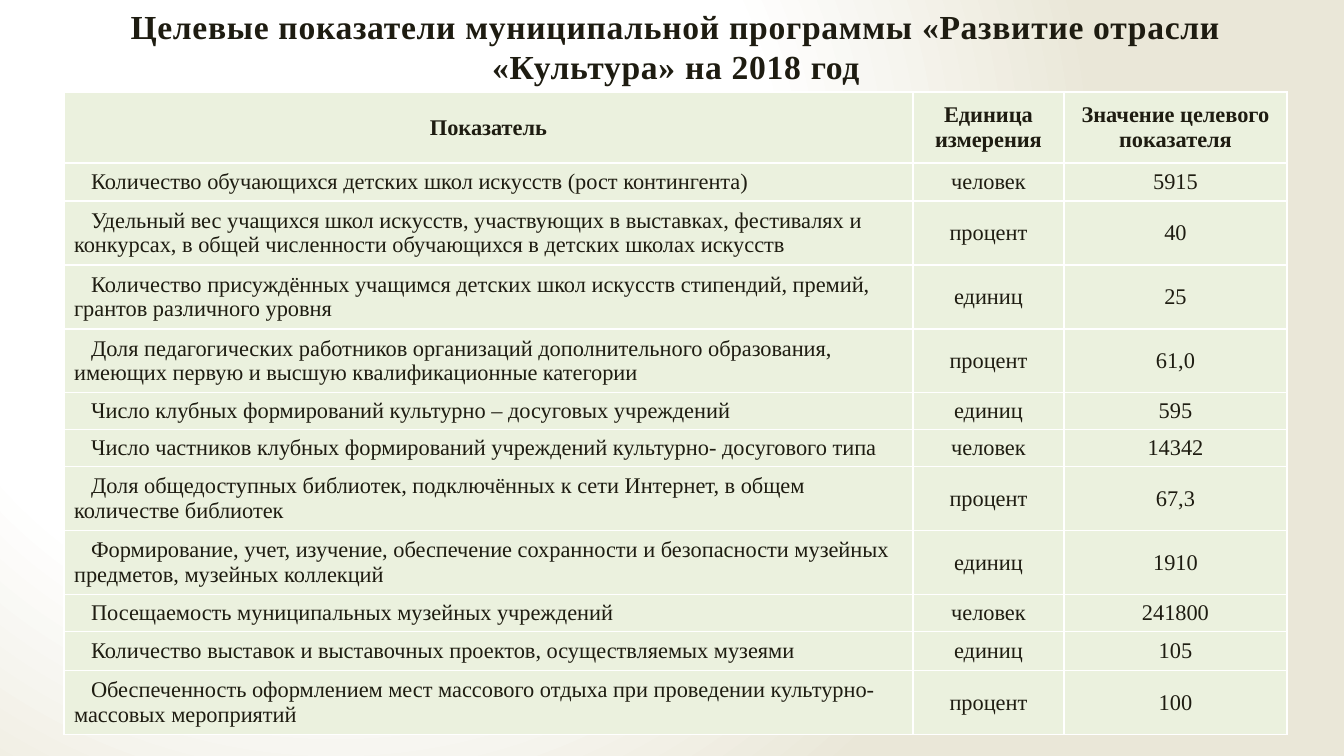
from pptx import Presentation
from pptx.dml.color import RGBColor
from pptx.enum.text import MSO_ANCHOR as Anchor, MSO_AUTO_SIZE as Fit, PP_ALIGN as Align
from pptx.oxml import parse_xml
from pptx.oxml.ns import nsdecls
from pptx.util import Pt

SCALE = 12192000 / 1344
FONT = "Times New Roman"
INK = RGBColor(0x1E, 0x1C, 0x11)
GREEN = RGBColor(0xEB, 0xF1, 0xDE)
WHITE = RGBColor(0xFF, 0xFF, 0xFF)
SAND = RGBColor(0xEA, 0xE7, 0xD8)

TITLE = "Целевые показатели муниципальной программы «Развитие отрасли «Культура» на 2018 год"
COLS = [849, 151, 223]
INDENT = 17
HEAD = (71, "Показатель", "Единица измерения", "Значение целевого показателя")
ROWS = [
    (38, "Количество обучающихся детских школ искусств (рост контингента)", "человек", "5915"),
    (64, "Удельный вес учащихся школ искусств, участвующих в выставках, фестивалях и конкурсах, "
         "в общей численности обучающихся в детских школах искусств", "процент", "40"),
    (64, "Количество присуждённых учащимся детских школ искусств стипендий, премий, "
         "грантов различного уровня", "единиц", "25"),
    (64, "Доля педагогических работников организаций дополнительного образования, "
         "имеющих первую и высшую квалификационные категории", "процент", "61,0"),
    (37, "Число клубных формирований культурно – досуговых учреждений", "единиц", "595"),
    (37, "Число частников клубных формирований учреждений культурно- досугового типа",
     "человек", "14342"),
    (64, "Доля общедоступных библиотек, подключённых к сети Интернет, "
         "в общем количестве библиотек", "процент", "67,3"),
    (64, "Формирование, учет, изучение, обеспечение сохранности и безопасности музейных "
         "предметов, музейных коллекций", "единиц", "1910"),
    (37, "Посещаемость муниципальных музейных учреждений", "человек", "241800"),
    (39, "Количество выставок и выставочных проектов, осуществляемых музеями", "единиц", "105"),
    (64, "Обеспеченность оформлением мест массового отдыха при проведении "
         "культурно-массовых мероприятий", "процент", "100"),
]


def px(num):
    """Turn pixels into EMU."""
    return round(num * SCALE)


def style(para, size, bold, align):
    """Set the font and alignment of a paragraph."""
    para.alignment = align
    font = para.font
    font.name, font.size, font.bold = FONT, Pt(size), bold
    font.color.rgb = INK


def add_back(slide):
    """Fill the background with a round gradient."""
    stops = "".join(
        f'<a:gs pos="{pos}000"><a:srgbClr val="{tone}"/></a:gs>'
        for pos, tone in [(19, WHITE), (56, WHITE), (100, SAND)])
    slide.element.cSld.insert(0, parse_xml(
        f'<p:bg {nsdecls("p", "a")}><p:bgPr><a:gradFill><a:gsLst>{stops}</a:gsLst>'
        '<a:path path="circle"><a:fillToRect l="50000" t="50000" r="100000" b="100000"/>'
        '</a:path></a:gradFill><a:effectLst/></p:bgPr></p:bg>'))


def add_title(slide):
    """Place and format the title."""
    title = slide.shapes.title
    title.left, title.top, title.width, title.height = map(px, (69, 0, 1214, 92))
    frame = title.text_frame
    frame.text = TITLE
    frame.word_wrap = True
    frame.auto_size = Fit.NONE
    frame.vertical_anchor = Anchor.MIDDLE
    para = frame.paragraphs[0]
    style(para, 24, True, Align.CENTER)
    para.runs[0].font._element.set("spc", "50")


def fill_cell(cell, text, bold, left):
    """Write one table cell."""
    cell.fill.solid()
    cell.fill.fore_color.rgb = GREEN
    cell.vertical_anchor = Anchor.MIDDLE
    cell.text = text
    para = cell.text_frame.paragraphs[0]
    if left:
        para._p.get_or_add_pPr().set("indent", str(px(INDENT)))
    style(para, 16, bold, Align.LEFT if left else Align.CENTER)


def add_grid(slide):
    """Add the table of targets."""
    data = [HEAD, *ROWS]
    high = sum(row[0] for row in data)
    table = slide.shapes.add_table(
        len(data), len(COLS), px(64), px(92), px(sum(COLS)), px(high)).table
    table.horz_banding = False
    for col, wide in zip(table.columns, COLS):
        col.width = px(wide)
    for i, (tall, *texts) in enumerate(data):
        table.rows[i].height = px(tall)
        for j, text in enumerate(texts):
            fill_cell(table.cell(i, j), text, i == 0, i > 0 and j == 0)


def main():
    """Build and save the slide."""
    deck = Presentation()
    deck.slide_width, deck.slide_height = px(1344), px(756)
    slide = deck.slides.add_slide(deck.slide_layouts[5])
    add_back(slide)
    add_title(slide)
    add_grid(slide)
    deck.save("out.pptx")


if __name__ == "__main__":
    main()
